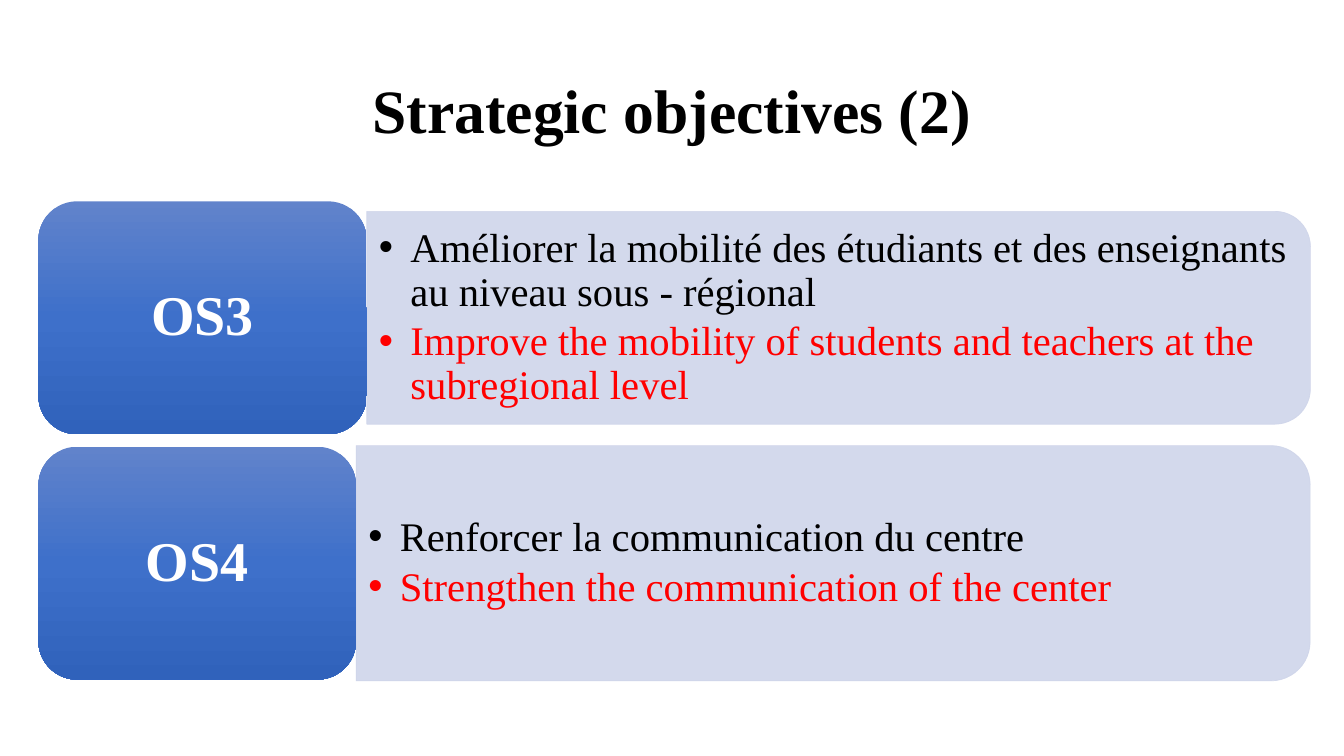
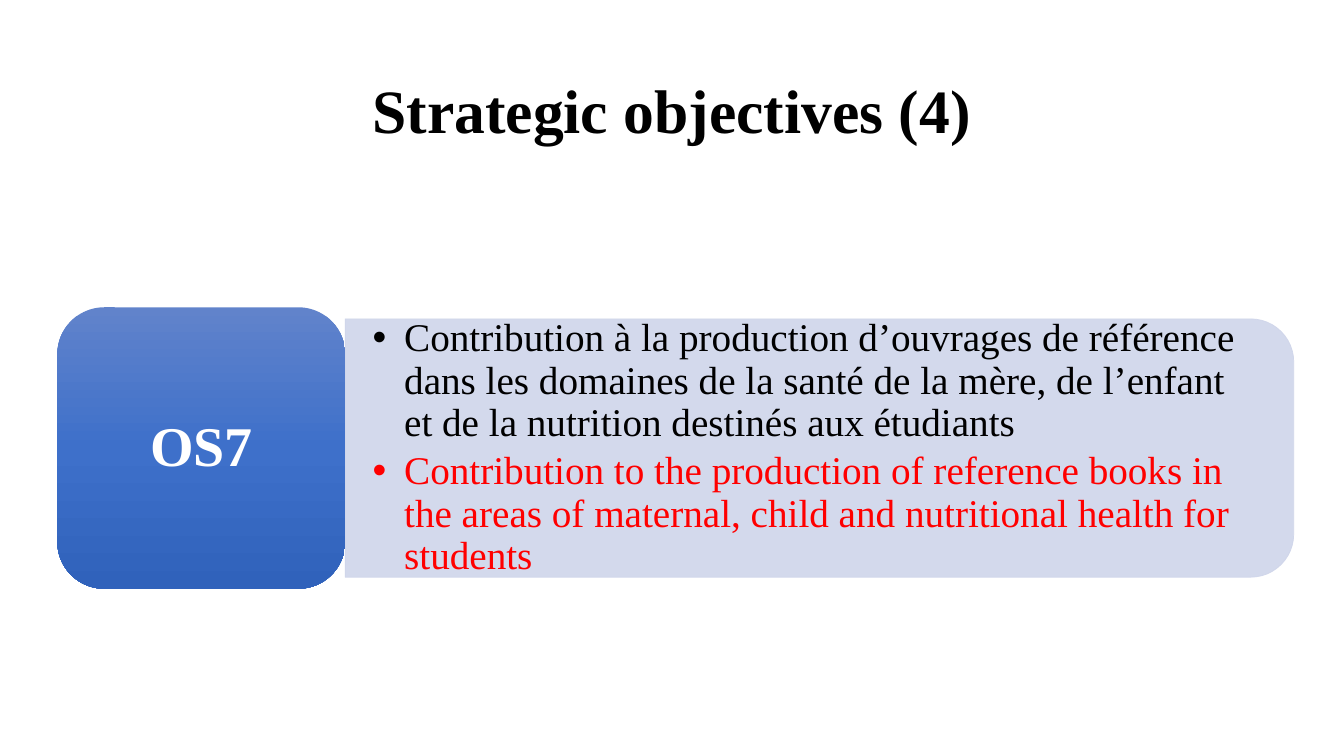
"""Build two slides of strategic objectives, each a title above labelled rows."""

from copy import deepcopy
from dataclasses import dataclass
from typing import Any

from lxml.etree import SubElement
from pptx import Presentation
from pptx.dml.color import RGBColor
from pptx.enum.shapes import MSO_SHAPE as Shape
from pptx.enum.text import MSO_ANCHOR as Anchor, PP_ALIGN as Align
from pptx.oxml.ns import qn
from pptx.util import Pt

BLACK = RGBColor(0x00, 0x00, 0x00)
WHITE = RGBColor(0xFF, 0xFF, 0xFF)
RED = RGBColor(0xFF, 0x00, 0x00)
PANEL = RGBColor(0xCF, 0xD5, 0xEA)
LABEL_GRADIENT = (
    RGBColor(0x61, 0x83, 0xCB),
    RGBColor(0x3E, 0x70, 0xCA),
    RGBColor(0x30, 0x62, 0xBB),
)
FONT = "Times New Roman"
PANEL_OPACITY = 90
CORNER_INSET = 0.0488
BULLET_INDENT = Pt(22.5)


@dataclass(frozen=True)
class TextStyle:
    size: float
    bold: bool = False
    align: Align = Align.CENTER
    space_after: float = 0
    margins: tuple[float, float] = (7.2, 3.6)
    bullet: bool = False


@dataclass(frozen=True)
class Objective:
    label: str
    french: str
    english: str
    left: float
    middle: float
    label_size: tuple[float, float]
    panel_size: tuple[float, float]
    text_size: float = 29
    margins: tuple[float, float] = (8.7, 4.4)


@dataclass(frozen=True)
class ObjectiveSlide:
    title: str
    objectives: tuple[Objective, ...]


TITLE_STYLE = TextStyle(44, bold=True)
LABEL_STYLE = TextStyle(40, bold=True, space_after=0.35, margins=(12, 6))

SLIDES = (
    ObjectiveSlide("Strategic objectives (2)", (
        Objective(
            "OS3",
            "Améliorer la mobilité des étudiants et des enseignants au niveau sous - régional",
            "Improve the mobility of students and teachers at the subregional level",
            27.4, 227, (234.6, 166.4), (674, 152),
        ),
        Objective(
            "OS4",
            "Renforcer la communication du centre",
            "Strengthen the communication of the center",
            27.4, 402.3, (227, 166.4), (681.4, 168),
        ),
    )),
    ObjectiveSlide("Strategic objectives (4)", (
        Objective(
            "OS7",
            "Contribution à la production d’ouvrages de référence dans les domaines de la santé "
            "de la mère, de l’enfant et de la nutrition destinés aux étudiants",
            "Contribution to the production of reference books in the areas of maternal, child "
            "and nutritional health for students",
            41, 320, (205.6, 201), (677.5, 184.5), 28, (19.6, 9.8),
        ),
    )),
)


def apply_format(target: Any, values: dict[str, Any]) -> None:
    for name, value in values.items():
        setattr(target, name, value)


def write_text(shape: Any, lines: list[tuple[str, RGBColor]], style: TextStyle) -> None:
    frame = shape.text_frame
    across, down = (Pt(margin) for margin in style.margins)
    apply_format(frame, {
        "word_wrap": True, "vertical_anchor": Anchor.MIDDLE,
        "margin_left": across, "margin_right": across,
        "margin_top": down, "margin_bottom": down,
    })
    for index, (text, color) in enumerate(lines):
        paragraph = frame.add_paragraph() if index else frame.paragraphs[0]
        apply_format(paragraph, {
            "alignment": style.align, "line_spacing": 0.9,
            "space_after": Pt(style.space_after * style.size),
        })
        if style.bullet:
            add_bullet(paragraph)
        run = paragraph.add_run()
        run.text = text
        apply_format(run.font, {"name": FONT, "size": Pt(style.size), "bold": style.bold})
        run.font.color.rgb = color


def add_bullet(paragraph: Any) -> None:
    properties = paragraph._p.get_or_add_pPr()
    properties.set("marL", str(BULLET_INDENT))
    properties.set("indent", str(-BULLET_INDENT))
    SubElement(properties, qn("a:buFont"), typeface="Arial")
    SubElement(properties, qn("a:buChar"), char="•")


def add_title(slide: Any, title: str) -> None:
    box = slide.shapes.add_textbox(Pt(66), Pt(28.8), Pt(828), Pt(104.4))
    write_text(box, [(title, BLACK)], TITLE_STYLE)


def add_panel(slide: Any, objective: Objective) -> None:
    width, height = objective.panel_size
    left = objective.left + objective.label_size[0]
    panel = slide.shapes.add_shape(
        Shape.ROUND_2_SAME_RECTANGLE,
        Pt(left + (width - height) / 2), Pt(objective.middle - width / 2),
        Pt(height), Pt(width),
    )
    panel.rotation = 90
    panel.shadow.inherit = False
    panel.fill.solid()
    panel.fill.fore_color.rgb = PANEL
    panel.line.color.rgb = PANEL
    panel.line.width = Pt(0.5)
    for color in panel.element.spPr.iter(qn("a:srgbClr")):
        SubElement(color, qn("a:alpha"), val=str(PANEL_OPACITY * 1000))

    inset = CORNER_INSET * height
    box = slide.shapes.add_textbox(
        Pt(left), Pt(objective.middle - height / 2 + inset),
        Pt(width - inset), Pt(height - 2 * inset),
    )
    style = TextStyle(
        objective.text_size, align=Align.LEFT, space_after=0.15,
        margins=objective.margins, bullet=True,
    )
    write_text(box, [(objective.french, BLACK), (objective.english, RED)], style)


def add_label(slide: Any, objective: Objective) -> None:
    width, height = objective.label_size
    label = slide.shapes.add_shape(
        Shape.ROUNDED_RECTANGLE,
        Pt(objective.left), Pt(objective.middle - height / 2), Pt(width), Pt(height),
    )
    label.shadow.inherit = False
    label.line.fill.background()
    label.fill.gradient()
    label.fill.gradient_angle = 270
    stop_list = next(label.element.spPr.iter(qn("a:gsLst")))
    stop_list.insert(1, deepcopy(stop_list[0]))
    for index, (stop, color) in enumerate(zip(label.fill.gradient_stops, LABEL_GRADIENT)):
        stop.position = index / 2
        stop.color.rgb = color
    write_text(label, [(objective.label, WHITE)], LABEL_STYLE)


def main() -> None:
    presentation = Presentation()
    apply_format(presentation, {"slide_width": Pt(960), "slide_height": Pt(540)})
    for content in SLIDES:
        slide = presentation.slides.add_slide(presentation.slide_layouts[6])
        add_title(slide, content.title)
        for objective in content.objectives:
            add_panel(slide, objective)
            add_label(slide, objective)
    presentation.save("out.pptx")


if __name__ == "__main__":
    main()
